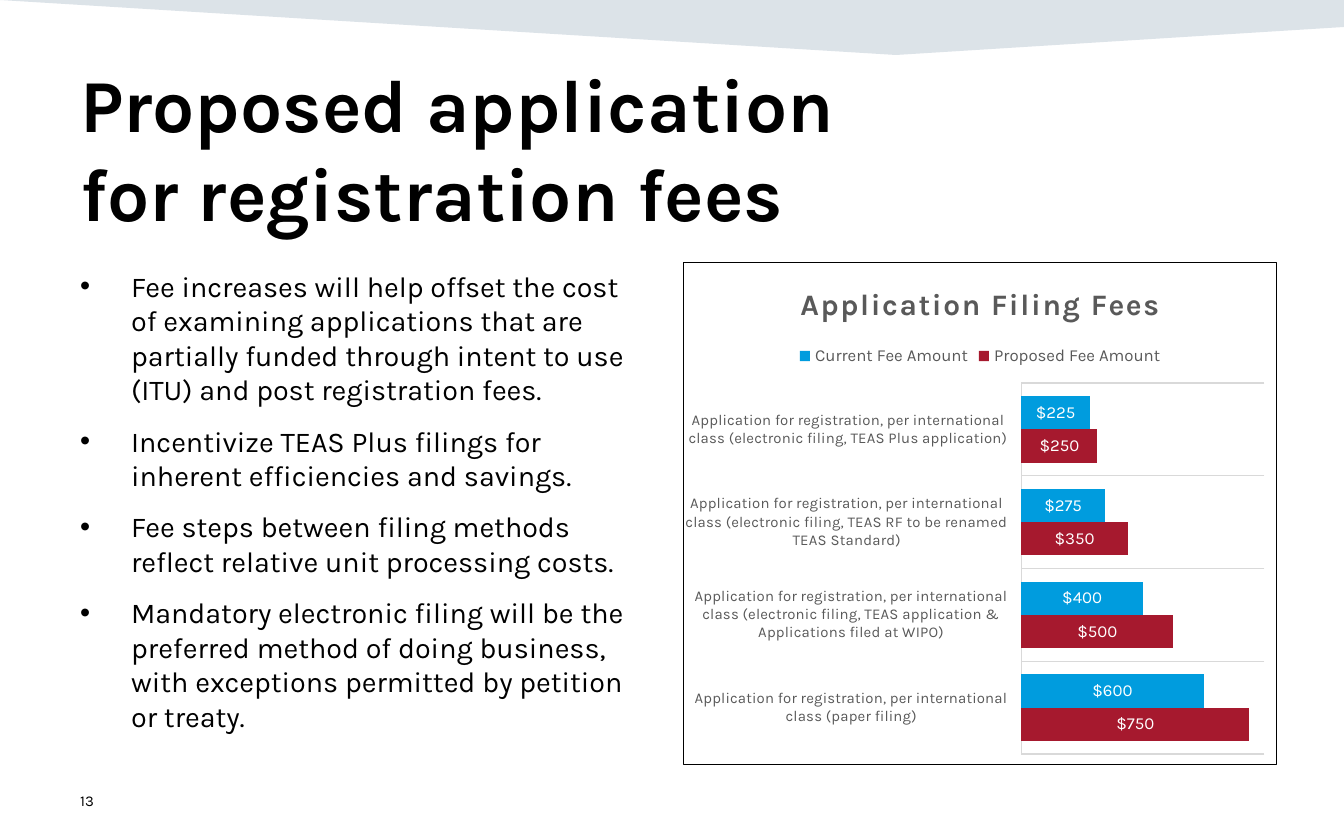
from lxml.etree import SubElement
from pptx import Presentation
from pptx.chart.data import CategoryChartData
from pptx.dml.color import RGBColor
from pptx.enum.chart import XL_CHART_TYPE, XL_LABEL_POSITION, XL_LEGEND_POSITION, XL_TICK_LABEL_POSITION, XL_TICK_MARK
from pptx.enum.text import MSO_ANCHOR
from pptx.oxml import parse_xml
from pptx.oxml.ns import nsdecls, qn
from pptx.util import Pt

EMU_PER_PX = 914400 / 134.4
FONT = "Karla"
GREY = "595959"
FEE_FORMAT = '"$"#,##0'

POINTS = [
    "Fee increases will help offset the cost of examining applications that are partially funded through intent to use (ITU) and post registration fees.",
    "Incentivize TEAS Plus filings for inherent efficiencies and savings.",
    "Fee steps between filing methods reflect relative unit processing costs.",
    "Mandatory electronic filing will be the preferred method of doing business, with exceptions permitted by petition or treaty.",
]
FILING_PREFIX = "Application for registration, per international class "
FILINGS = [
    "(paper filing)",
    "(electronic filing, TEAS application & Applications filed at WIPO)",
    "(electronic filing, TEAS RF to be renamed TEAS Standard)",
    "(electronic filing, TEAS Plus application)",
]
FEES = [
    ("Proposed Fee Amount", "A6192E", (750, 500, 350, 250)),
    ("Current Fee Amount", "009CDE", (600, 400, 275, 225)),
]


def px(length):
    return round(length * EMU_PER_PX)


def rgb(value):
    return RGBColor.from_string(value)


def style(font, size, color="000000", bold=False):
    font.name, font.size, font.bold = FONT, Pt(size), bold
    font.color.rgb = rgb(color)


def add_text(slide, box, text, size, bold=False, anchor=MSO_ANCHOR.TOP, bullet=None, indent=0, before=0):
    frame = slide.shapes.add_textbox(*map(px, box)).text_frame
    frame.word_wrap = True
    frame.vertical_anchor = anchor
    lines = [text] if isinstance(text, str) else text
    for index, line in enumerate(lines):
        paragraph = frame.paragraphs[0] if index == 0 else frame.add_paragraph()
        paragraph.text = line
        paragraph.space_before = Pt(before)
        for run in paragraph.runs:
            style(run.font, size, bold=bold)
        if bullet:
            properties = paragraph._p.get_or_add_pPr()
            properties.set("marL", str(px(indent)))
            properties.set("indent", str(-px(indent)))
            SubElement(properties, qn("a:buFont"), typeface="Arial")
            SubElement(properties, qn("a:buChar"), char=bullet)


def add_banner(slide, box):
    left, top, width, height = box
    builder = slide.shapes.build_freeform(left, top, scale=EMU_PER_PX)
    builder.add_line_segments([
        (left + width, top),
        (left + width, top + height // 2),
        (left + width * 2 // 3, top + height),
    ])
    banner = builder.convert_to_shape()
    banner.shadow.inherit = False
    banner.line.fill.background()
    banner.fill.solid()
    banner.fill.fore_color.rgb = rgb("164469")
    color = banner._element.spPr.find(qn("a:solidFill"))[0]
    SubElement(color, qn("a:alpha"), val="15000")


def place_plot(chart, x, y, w, h):
    layout = parse_xml(
        f'<c:layout {nsdecls("c")}><c:manualLayout><c:layoutTarget val="inner"/>'
        '<c:xMode val="edge"/><c:yMode val="edge"/>'
        f'<c:x val="{x}"/><c:y val="{y}"/><c:w val="{w}"/><c:h val="{h}"/>'
        '</c:manualLayout></c:layout>')
    plot_area = chart._chartSpace.chart.plotArea
    for automatic in plot_area.findall(qn("c:layout")):
        plot_area.remove(automatic)
    plot_area.insert(0, layout)


def add_border(chart):
    border = parse_xml(
        f'<c:spPr {nsdecls("c", "a")}><a:noFill/><a:ln w="9525"><a:solidFill>'
        '<a:srgbClr val="000000"/></a:solidFill></a:ln></c:spPr>')
    chart._chartSpace.chart.addnext(border)


def add_fee_chart(slide, box):
    data = CategoryChartData(number_format=FEE_FORMAT)
    data.categories = [FILING_PREFIX + filing for filing in FILINGS]
    for name, _, amounts in FEES:
        data.add_series(name, amounts)
    chart = slide.shapes.add_chart(XL_CHART_TYPE.BAR_CLUSTERED, *map(px, box), data).chart
    style(chart.font, 10)

    heading = chart.chart_title.text_frame
    heading.text = "Application Filing Fees"
    title_font = heading.paragraphs[0].runs[0].font
    style(title_font, 16, GREY, bold=True)
    title_font._element.set("spc", "100")
    chart.chart_title.include_in_layout = False

    chart.has_legend = True
    chart.legend.position = XL_LEGEND_POSITION.TOP
    chart.legend.include_in_layout = False
    style(chart.legend.font, 9, GREY)

    filing_axis, fee_axis = chart.category_axis, chart.value_axis
    filing_axis.major_tick_mark = XL_TICK_MARK.NONE
    filing_axis.tick_label_position = XL_TICK_LABEL_POSITION.LOW
    style(filing_axis.tick_labels.font, 8, GREY)
    filing_axis.has_major_gridlines = True
    for line in (filing_axis.format.line, filing_axis.major_gridlines.format.line):
        line.color.rgb = rgb("D9D9D9")
        line.width = Pt(0.75)
    fee_axis.visible = False
    fee_axis.has_major_gridlines = False
    fee_axis.minimum_scale, fee_axis.maximum_scale = 0, 800

    plot = chart.plots[0]
    plot.gap_width, plot.overlap, plot.vary_by_categories = 79, 0, False
    for series, (_, color, _) in zip(plot.series, FEES):
        series.format.fill.solid()
        series.format.fill.fore_color.rgb = rgb(color)
        labels = series.data_labels
        labels.show_value = True
        labels.position = XL_LABEL_POSITION.CENTER
        labels.number_format, labels.number_format_is_linked = FEE_FORMAT, False
        style(labels.font, 9, "FFFFFF")
    place_plot(chart, 0.57, 0.24, 0.41, 0.74)
    add_border(chart)


def main():
    deck = Presentation()
    deck.slide_width, deck.slide_height = px(1344), px(840)
    slide = deck.slides.add_slide(deck.slide_layouts[6])
    add_banner(slide, (0, 0, 1344, 55))
    add_text(slide, (67, 51, 1210, 190), "Proposed application\vfor registration fees", 40, bold=True)
    add_text(slide, (67, 262, 594, 503), POINTS, 15.4, bullet="•", indent=51, before=9)
    add_text(slide, (67, 778, 302, 45), "13", 8, anchor=MSO_ANCHOR.MIDDLE)
    add_fee_chart(slide, (683, 262, 594, 503))
    deck.save("out.pptx")


if __name__ == "__main__":
    main()
